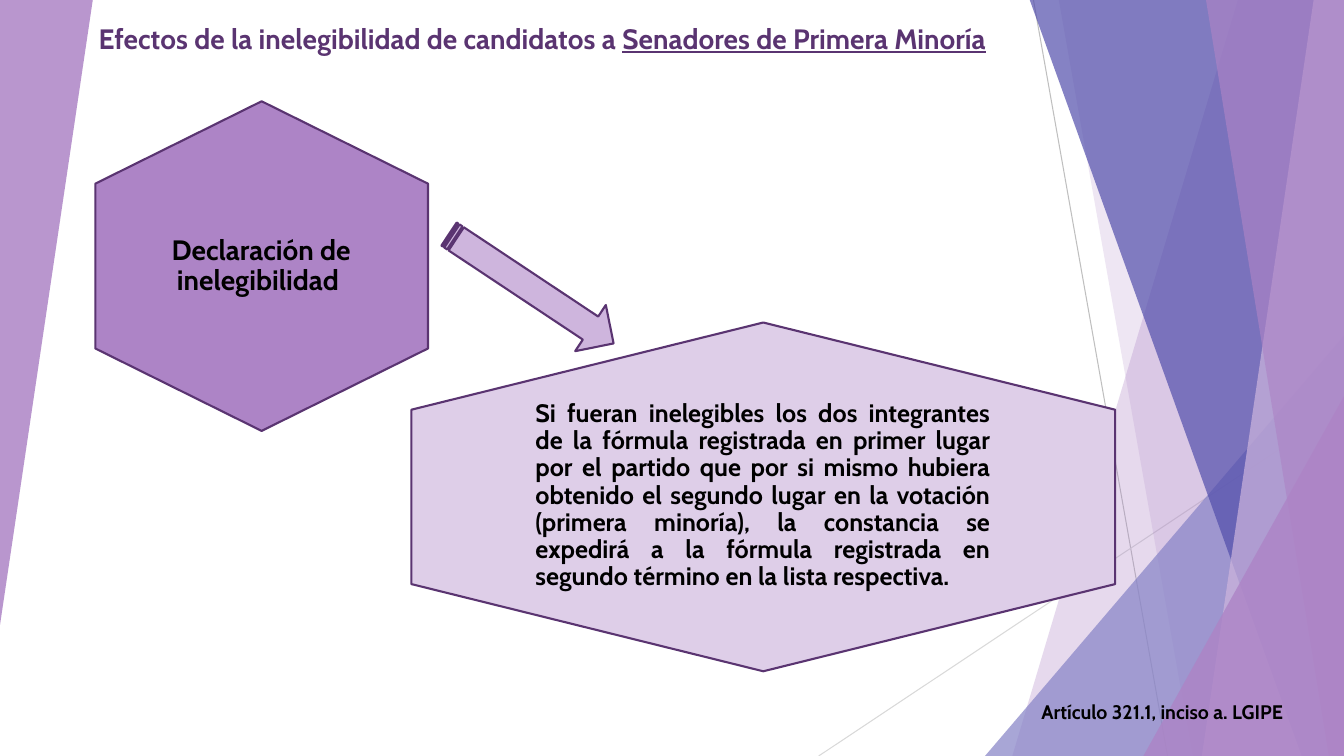
from pptx import Presentation
from pptx.dml.color import RGBColor
from pptx.enum.shapes import MSO_CONNECTOR, MSO_SHAPE
from pptx.enum.text import MSO_ANCHOR, MSO_AUTO_SIZE, PP_ALIGN
from pptx.oxml.ns import qn
from pptx.util import Inches, Pt
from lxml import etree

STRAIGHT = MSO_CONNECTOR.STRAIGHT
TRIANGLE = MSO_SHAPE.ISOSCELES_TRIANGLE
HEXAGON = MSO_SHAPE.HEXAGON
STRIPED_ARROW = MSO_SHAPE.STRIPED_RIGHT_ARROW
TOP, MIDDLE = MSO_ANCHOR.TOP, MSO_ANCHOR.MIDDLE
FIT_SHAPE = MSO_AUTO_SIZE.SHAPE_TO_FIT_TEXT
LEFT, CENTER, JUSTIFY = PP_ALIGN.LEFT, PP_ALIGN.CENTER, PP_ALIGN.JUSTIFY

FONT = "Cabin"
WIDTH, HEIGHT = 13.33, 7.5
BAND_TOP = -0.01

BLACK = RGBColor(0x00, 0x00, 0x00)
GRAY = RGBColor(0xBF, 0xBF, 0xBF)
LIGHT_GRAY = RGBColor(0xD9, 0xD9, 0xD9)
DARK_PURPLE = RGBColor(0x5A, 0x34, 0x71)
PURPLE = RGBColor(0xAD, 0x84, 0xC6)
LILAC = RGBColor(0xCE, 0xB5, 0xDD)
PALE_LILAC = RGBColor(0xDE, 0xCE, 0xE8)
INDIGO = RGBColor(0x52, 0x4E, 0xAB)
PERIWINKLE = RGBColor(0x87, 0x84, 0xC7)


def paint(shape, color, opacity=100):
    shape.shadow.inherit = False
    shape.fill.solid()
    shape.fill.fore_color.rgb = color
    shape.line.fill.background()
    if opacity < 100:
        tint = shape.element.spPr.find(qn("a:solidFill")).find(qn("a:srgbClr"))
        etree.SubElement(tint, qn("a:alpha")).set("val", str(opacity * 1000))


def add_line(page, start, end, color):
    line = page.shapes.add_connector(STRAIGHT, *map(Inches, start + end))
    line.line.color.rgb = color
    line.line.width = Pt(0.75)
    etree.SubElement(line.element.spPr, qn("a:effectLst"))


def add_band(page, top_x, bottom_x, color, opacity):
    corners = [(WIDTH, BAND_TOP), (WIDTH, HEIGHT), (bottom_x, HEIGHT)]
    builder = page.shapes.build_freeform(Inches(top_x), Inches(BAND_TOP))
    builder.add_line_segments([(Inches(x), Inches(y)) for x, y in corners])
    paint(builder.convert_to_shape(), color, opacity)


def add_triangle(page, frame, color, opacity, rotation=0):
    triangle = page.shapes.add_shape(TRIANGLE, *map(Inches, frame))
    triangle.adjustments[0] = 1
    triangle.rotation = rotation
    paint(triangle, color, opacity)


def add_outlined(page, kind, frame, rotation, color):
    shape = page.shapes.add_shape(kind, *map(Inches, frame))
    shape.rotation = rotation
    paint(shape, color)
    shape.line.color.rgb = DARK_PURPLE
    shape.line.width = Pt(1.5)


def add_text(page, frame, texts, size, color=BLACK, align=LEFT):
    box = page.shapes.add_textbox(*map(Inches, frame))
    text_frame = box.text_frame
    text_frame.word_wrap = True
    text_frame.auto_size = FIT_SHAPE
    para = text_frame.paragraphs[0]
    para.alignment = align
    for text in texts:
        span = para.add_run()
        span.text = text
        span.font.name = FONT
        span.font.size = Pt(size)
        span.font.bold = True
        span.font.color.rgb = color
    return box


def add_label(page, frame, text, size, align, inset):
    box = add_text(page, frame, [text], size, align=align)
    text_frame = box.text_frame
    text_frame.auto_size = MSO_AUTO_SIZE.NONE
    text_frame.vertical_anchor = MIDDLE
    text_frame.margin_left = text_frame.margin_right = Inches(inset)
    text_frame.margin_top = text_frame.margin_bottom = Inches(inset)
    text_frame.paragraphs[0].line_spacing = 0.9


def add_backdrop(page):
    add_line(page, (10.25, 0), (11.58, HEIGHT), GRAY)
    add_line(page, (WIDTH, 4.03), (8.12, HEIGHT), LIGHT_GRAY)
    add_band(page, 12.28, 10.04, PURPLE, 30)
    add_band(page, 10.5, 11.83, PURPLE, 20)
    add_triangle(page, (9.77, 3.33, 3.56, 4.17), PERIWINKLE, 72)
    add_band(page, 10.21, 12.91, INDIGO, 70)
    add_band(page, 13.03, 11.92, LILAC, 70)
    add_band(page, 11.96, 13.18, PURPLE, 65)
    add_triangle(page, (11.34, 3.93, 1.99, 3.57), PURPLE, 80)
    add_triangle(page, (0, 0, 0.92, 6.2), PURPLE, 85, 180)


def main():
    deck = Presentation()
    deck.slide_width, deck.slide_height = Inches(WIDTH), Inches(HEIGHT)
    page = deck.slides.add_slide(deck.slide_layouts[6])
    add_backdrop(page)

    title = add_text(
        page, (0.88, 0.16, 9.36, 0.77),
        ["Efectos de la inelegibilidad de candidatos a ",
         "Senadores de Primera Minoría"],
        20, DARK_PURPLE, JUSTIFY)
    title.text_frame.paragraphs[0].runs[1].font.underline = True

    add_outlined(page, HEXAGON, (5.84, 1.44, 3.46, 6.98), 90, PALE_LILAC)
    add_label(
        page, (5.24, 3.77, 4.65, 2.3),
        "Si fueran inelegibles los dos integrantes de la fórmula registrada "
        "en primer lugar por el partido que por si mismo hubiera obtenido el "
        "segundo lugar en la votación (primera minoría), la constancia se "
        "expedirá a la fórmula registrada en segundo término en la lista "
        "respectiva. ",
        18, JUSTIFY, 0.07)
    add_outlined(page, HEXAGON, (0.96, 0.99, 3.27, 3.3), 90, PURPLE)
    add_label(page, (1.49, 1.55, 2.2, 2.18),
              "Declaración de inelegibilidad ", 20, CENTER, 0)
    add_outlined(page, STRIPED_ARROW, (4.29, 2.59, 1.96, 0.55), 33.6, LILAC)
    add_text(page, (10.23, 6.89, 3.1, 0.34),
             ["Artículo 321.1, inciso a. LGIPE"], 14)
    deck.save("out.pptx")


if __name__ == "__main__":
    main()
